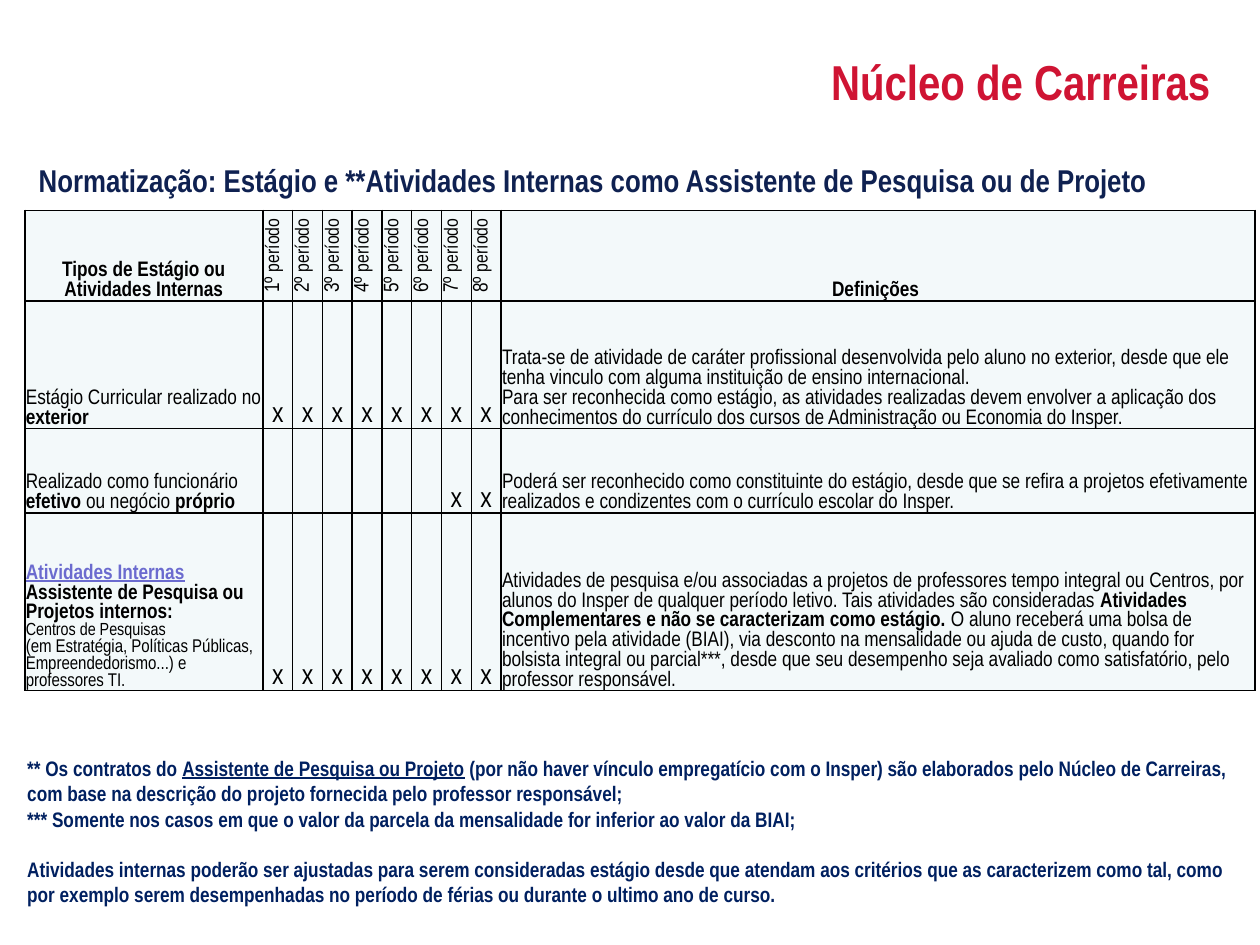
from lxml.etree import SubElement
from pptx import Presentation
from pptx.dml.color import RGBColor
from pptx.enum.text import MSO_ANCHOR, PP_ALIGN
from pptx.oxml import parse_xml
from pptx.oxml.ns import nsdecls, qn
from pptx.util import Cm, Pt

FONT = "Arial Narrow"
HEX = {"title": "CF1433", "head": "0F2151", "note": "002060",
       "text": "000000", "link": "6B6BCF", "cell": "F3F9FA", "line": "000000"}
BOLD = {"bold": True}
SMALL = {"size": 10.5}
TERMS = range(1, 9)
HEADS = ("Tipos de Estágio ou Atividades Internas", "Definições ")
ROWS = [
    ([[("Estágio Curricular realizado no ", {}), ("exterior", BOLD)]],
     TERMS,
     [[("Trata-se de atividade de caráter profissional desenvolvida pelo aluno no exterior, desde que ele tenha vinculo com alguma instituição de ensino internacional.", {})],
      [("Para ser reconhecida como estágio, as atividades realizadas devem envolver a aplicação dos conhecimentos do currículo dos cursos de Administração ou Economia do Insper.", {})]]),
    ([[("Realizado como funcionário ", {}), ("efetivo", BOLD),
       (" ou negócio ", {}), ("próprio", BOLD)]],
     (7, 8),
     [[("Poderá ser reconhecido como constituinte do estágio, desde que se refira a projetos efetivamente realizados e condizentes com o currículo escolar do Insper.", {})]]),
    ([[("Atividades Internas", {"bold": True, "line": True, "color": "link"})],
      [("Assistente de Pesquisa ou Projetos internos: ", BOLD)],
      [("Centros de Pesquisas", {"size": 10})],
      [("(em Estratégia, Políticas Públicas, Empreendedorismo...) e professores TI.", SMALL)]],
     TERMS,
     [[("Atividades de pesquisa e/ou associadas a projetos de professores tempo integral ou Centros, por alunos do Insper de qualquer período letivo. Tais atividades são consideradas ", {}),
       ("Atividades Complementares e não se caracterizam como estágio.", BOLD),
       (" O aluno receberá uma bolsa de incentivo pela atividade (BIAI), via desconto na mensalidade ou ajuda de custo, quando for bolsista integral ou parcial***, desde que seu desempenho seja avaliado como satisfatório, pelo professor responsável.", {})]]),
]
NOTE = {"bold": True, "color": "note"}
NOTES = [
    [("** Os contratos do ", NOTE),
     ("Assistente de Pesquisa ou Projeto", {**NOTE, "line": True}),
     (" (por não haver vínculo empregatício com o Insper) são elaborados pelo Núcleo de Carreiras, com base na descrição do projeto fornecida pelo professor responsável;", NOTE)],
    [("*** Somente nos casos em que o valor da parcela da mensalidade for inferior ao valor da BIAI;", NOTE)],
    [("Atividades internas poderão ser ajustadas para serem consideradas estágio desde que atendam aos critérios que as caracterizem como tal, como por exemplo serem desempenhadas no período de férias ou durante o ultimo ano de curso.", NOTE)],
]


def style(run, size=12, bold=False, line=False, color="text"):
    """Format one run."""
    font = run.font
    font.name, font.size = FONT, Pt(size)
    font.bold, font.underline = bold, line
    font.color.rgb = RGBColor.from_string(HEX[color])


def write(frame, paras, align=PP_ALIGN.LEFT):
    """Fill a text frame with paragraphs of styled runs."""
    for i, parts in enumerate(paras):
        para = frame.add_paragraph() if i else frame.paragraphs[0]
        para.alignment = align
        for text, look in parts:
            run = para.add_run()
            run.text = text
            style(run, **look)


def place(shape, box):
    """Move a shape to a box in centimetres."""
    shape.left, shape.top, shape.width, shape.height = map(Cm, box)


def add_title(slide, box):
    """Place the slide title."""
    title = slide.shapes.title
    place(title, box)
    frame = title.text_frame
    frame.word_wrap = False
    frame.vertical_anchor = MSO_ANCHOR.TOP
    write(frame, [[("Núcleo de Carreiras", {"size": 28, "bold": True, "color": "title"})]])


def add_text(slide, box, paras, wrap=True):
    """Add a text box and return its frame."""
    frame = slide.shapes.add_textbox(*map(Cm, box)).text_frame
    frame.word_wrap = wrap
    write(frame, paras)
    return frame


def dress(cell):
    """Give a cell its fill, margins and borders."""
    cell.fill.solid()
    cell.fill.fore_color.rgb = RGBColor.from_string(HEX["cell"])
    cell.vertical_anchor = MSO_ANCHOR.BOTTOM
    cell.margin_left = cell.margin_right = cell.margin_top = Cm(0.02)
    cell.margin_bottom = 0
    prop = cell._tc.get_or_add_tcPr()
    for i, side in enumerate("LRTB"):
        edge = parse_xml(f'<a:ln{side} {nsdecls("a")} w="{Pt(1)}"/>')
        fill = SubElement(edge, qn("a:solidFill"))
        SubElement(fill, qn("a:srgbClr"), val=HEX["line"])
        prop.insert(i, edge)


def add_grid(slide, box):
    """Add the table of activities by term."""
    tall = (1.83, 2.57, 1.7, 3.58)
    first, term = 4.8, 0.6
    last = box[2] - first - term * len(TERMS)
    wide = [first] + [term] * len(TERMS) + [last]
    table = slide.shapes.add_table(len(tall), len(wide), *map(Cm, box)).table
    for row, size in zip(table.rows, tall):
        row.height = Cm(size)
    for col, size in zip(table.columns, wide):
        col.width = Cm(size)
    for cell in table.iter_cells():
        dress(cell)

    def put(row, col, paras, align=PP_ALIGN.LEFT):
        """Write into one cell."""
        write(table.cell(row, col).text_frame, paras, align)

    end, mid = len(wide) - 1, PP_ALIGN.CENTER
    for col, text in zip((0, end), HEADS):
        put(0, col, [[(text, BOLD)]], mid)
    for n in TERMS:
        put(0, n, [[(f"{n}º ", {}), ("período", {"size": 11})]], mid)
        table.cell(0, n)._tc.get_or_add_tcPr().set("vert", "vert270")
    for i, (name, marks, about) in enumerate(ROWS, 1):
        put(i, 0, name)
        put(i, end, about)
        for n in marks:
            put(i, n, [[("x", {"size": 16})]], mid)


def main():
    """Build and save the slide."""
    deck = Presentation()
    deck.slide_width, deck.slide_height = Cm(25.4), Cm(19.05)
    slide = deck.slides.add_slide(deck.slide_layouts[5])
    add_title(slide, (16.5, 0.92, 8.26, 1.45))
    add_grid(slide, (0.5, 4.24, 24.8, 9.68))
    head = "Normatização: Estágio e **Atividades Internas como Assistente de Pesquisa ou de Projeto"
    add_text(slide, (0.53, 3.12, 23.1, 1.02),
             [[(head, {"size": 18, "bold": True, "color": "head"})]], False)
    notes = add_text(slide, (0.3, 15.11, 25.1, 3.33), NOTES)
    notes.paragraphs[-1].space_before = Pt(14.5)
    deck.save("out.pptx")


if __name__ == "__main__":
    main()
